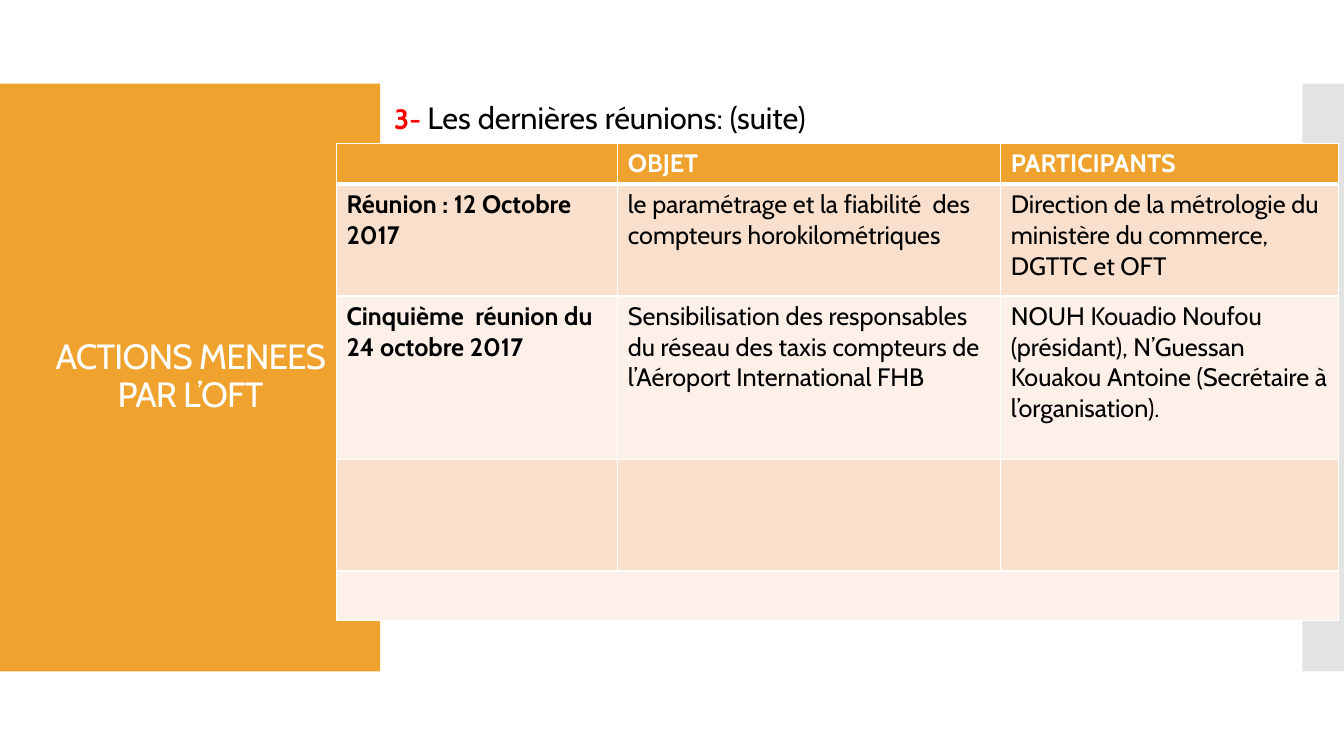
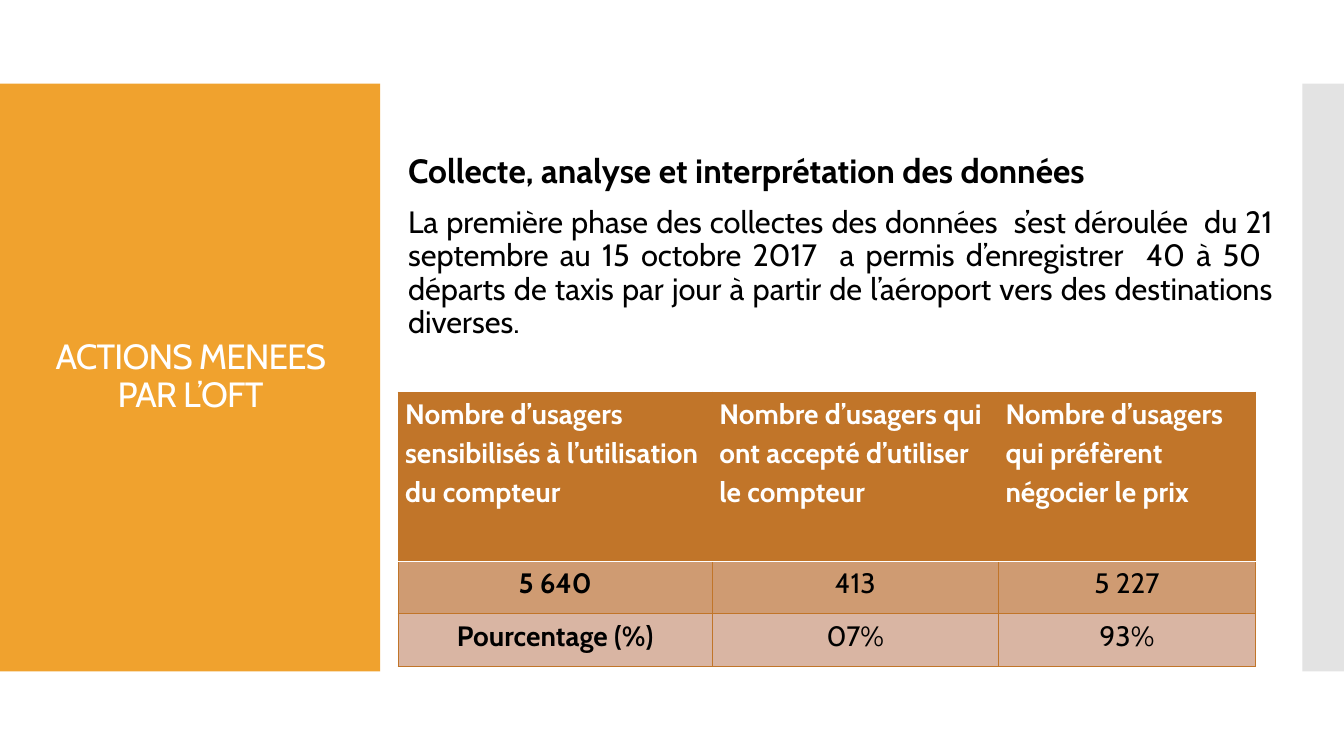
from lxml.etree import SubElement
from pptx import Presentation
from pptx.dml.color import RGBColor
from pptx.enum.shapes import MSO_SHAPE as Preset
from pptx.enum.text import MSO_ANCHOR as Anchor, MSO_AUTO_SIZE as AutoSize, PP_ALIGN as Align
from pptx.oxml.ns import qn
from pptx.util import Cm, Pt

COLORS = {
    "orange": "F0A22E", "grey": "E3E3E3", "white": "FFFFFF", "black": "000000", "red": "FF0000",
    "peach": "F9E0CD", "cream": "FCF0E8",
    "brown": "C17529", "tan": "CF9B72", "rose": "D9B5A3",
}
FONT = "Cabin"
TITLE = "ACTIONS MENEES PAR L’OFT"


def rgb(name):
    return RGBColor.from_string(COLORS[name])


class Deck:
    """Holds the shared style and the slide being built."""

    def __init__(self):
        self.presentation = Presentation()
        self.presentation.slide_width = Cm(33.87)
        self.presentation.slide_height = Cm(19.05)
        self.layout = self.presentation.slide_layouts[1]
        self.slide = None

    def new_slide(self):
        self.slide = self.presentation.slides.add_slide(self.layout)
        if len(self.presentation.slides) == 1:
            self.band(0, 9.58, "orange")
            self.band(32.82, 1.05, "grey")
        self.title()

    def band(self, left, width, color):
        """Side band, moved to the layout so that every slide shows it."""
        shape = self.slide.shapes.add_shape(Preset.RECTANGLE, Cm(left), Cm(2.11), Cm(width), Cm(14.81))
        shape.shadow.inherit = False
        shape.fill.solid()
        shape.fill.fore_color.rgb = rgb(color)
        shape.line.fill.background()
        self.layout.shapes._spTree.insert(2, shape._element)

    def style(self, font, size, color="black", bold=False):
        font.name, font.size, font.bold = FONT, Pt(size), bold
        font.color.rgb = rgb(color)

    def place(self, shape, left, top, width, height):
        shape.left, shape.top, shape.width, shape.height = map(Cm, (left, top, width, height))
        frame = shape.text_frame
        frame.word_wrap = True
        frame.auto_size = AutoSize.NONE
        frame.vertical_anchor = Anchor.MIDDLE
        return frame

    def title(self):
        frame = self.place(self.slide.shapes.title, 0.71, 3.12, 8.18, 12.78)
        frame.text = TITLE
        paragraph = frame.paragraphs[0]
        paragraph.alignment = Align.CENTER
        paragraph.line_spacing = 0.9
        self.style(paragraph.font, 25, "white")
        paragraph.font._rPr.set("spc", "-60")

    def body(self, box, paragraphs):
        """Each paragraph is a list of runs: text, size, colour, bold."""
        frame = self.place(self.slide.placeholders[1], *box)
        for index, runs in enumerate(paragraphs):
            paragraph = frame.add_paragraph() if index else frame.paragraphs[0]
            properties = paragraph._p.get_or_add_pPr()
            properties.set("marL", "0")
            properties.set("indent", "0")
            SubElement(properties, qn("a:buNone"))
            paragraph.alignment = Align.JUSTIFY
            paragraph.line_spacing = 0.9
            paragraph.space_before = Pt(12 if index else 0)
            for text, *look in runs:
                run = paragraph.add_run()
                run.text = text
                if len(runs) > 1:
                    self.style(run.font, *look)
            if len(runs) == 1:
                self.style(paragraph.font, *runs[0][1:])

    def table(self, left, top, columns, heights, rows, fills, size, borders, header_rule,
              centered=False, compact=False):
        """Header row, then rows whose first column is bold."""
        frame = self.slide.shapes.add_table(
            len(heights), len(columns), Cm(left), Cm(top), Cm(sum(columns)), Cm(sum(heights)))
        table = frame.table
        table.horz_banding = False
        for column, width in zip(table.columns, columns):
            column.width = Cm(width)
        for row, height in zip(table.rows, heights):
            row.height = Cm(height)
        for r, fill in enumerate(fills):
            for c in range(len(columns)):
                cell = table.cell(r, c)
                lines = {"L": borders, "R": borders, "T": borders, "B": borders}
                if r < 2:
                    lines["T" if r else "B"] = header_rule
                for side, (color, width) in lines.items():
                    self.border(cell, side, color, width)
                cell.fill.solid()
                cell.fill.fore_color.rgb = rgb(fill)
                if compact:
                    cell.margin_left = cell.margin_right = Cm(0.18)
                    cell.margin_top = cell.margin_bottom = 0
                if r < len(rows):
                    cell.text = rows[r][c]
                paragraph = cell.text_frame.paragraphs[0]
                if compact:
                    paragraph.line_spacing = 1.15
                    paragraph.space_after = Pt(10)
                if centered and r:
                    paragraph.alignment = Align.CENTER
                self.style(paragraph.font, size, "black" if r else "white", r == 0 or c == 0)
        return table

    def border(self, cell, side, color, width):
        line = SubElement(cell._tc.get_or_add_tcPr(), qn("a:ln" + side), w=str(Pt(width)))
        SubElement(SubElement(line, qn("a:solidFill")), qn("a:srgbClr"), val=COLORS[color])


def meetings(deck):
    deck.new_slide()
    deck.body((9.68, 2.27, 22.1, 1.5), [
        [("3- ", 20, "red", True), ("Les dernières réunions: (suite)", 22)],
    ])
    table = deck.table(
        8.48, 3.61, [7.09, 9.65, 8.51], [0.86, 2.82, 4.11, 2.82, 1.24],
        [
            ["", "OBJET", "PARTICIPANTS"],
            ["Réunion : 12 Octobre 2017",
             "le paramétrage et la fiabilité  des compteurs horokilométriques",
             "Direction de la métrologie du ministère du commerce, DGTTC et OFT"],
            ["Cinquième  réunion du 24 octobre 2017",
             "Sensibilisation des responsables du réseau des taxis compteurs de "
             "l’Aéroport International FHB",
             "NOUH Kouadio Noufou (présidant), N’Guessan Kouakou Antoine "
             "(Secrétaire à l’organisation)."],
        ],
        ["orange", "peach", "cream", "peach", "cream"], 18, ("white", 1), ("white", 3))
    table.cell(4, 0).merge(table.cell(4, 2))


def survey(deck):
    deck.new_slide()
    deck.body((10.03, 3.43, 22.3, 5.59), [
        [("Collecte, analyse et interprétation des données", 24, "black", True)],
        [("La première phase des collectes des données  s’est déroulée  du 21 septembre au "
          "15 octobre 2017  a permis d’enregistrer  40 à 50  départs de taxis par jour à partir "
          "de l’aéroport vers des destinations diverses.", 22)],
    ])
    deck.table(
        10.03, 9.88, [7.92, 7.21, 6.48], [4.27, 1.32, 1.32],
        [
            ["Nombre d’usagers sensibilisés à l’utilisation du compteur",
             "Nombre d’usagers qui ont accepté d’utiliser le compteur",
             "Nombre d’usagers qui préfèrent négocier le prix"],
            ["5 640", "413", "5 227"],
            ["Pourcentage (%)", "07%", "93%"],
        ],
        ["brown", "tan", "rose"], 20, ("brown", 0.75), ("white", 0.85),
        centered=True, compact=True)


def main():
    deck = Deck()
    meetings(deck)
    survey(deck)
    deck.presentation.save("out.pptx")


if __name__ == "__main__":
    main()
